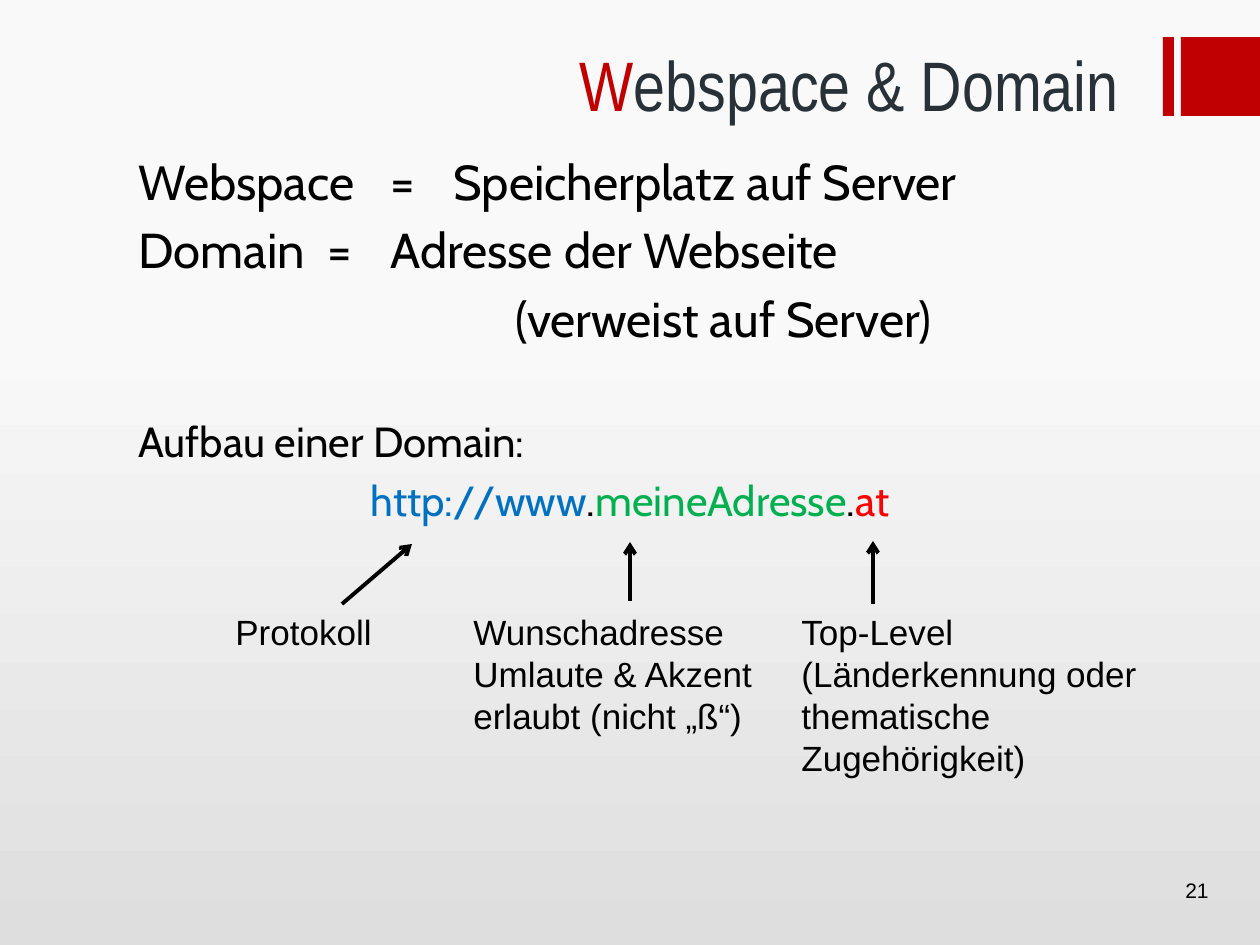
from dataclasses import dataclass

from lxml.etree import SubElement
from pptx import Presentation
from pptx.dml.color import RGBColor
from pptx.enum.shapes import MSO_CONNECTOR, MSO_SHAPE
from pptx.enum.text import MSO_ANCHOR, MSO_AUTO_SIZE as AUTO, PP_ALIGN as ALIGN
from pptx.oxml import parse_xml
from pptx.oxml.ns import nsdecls, qn
from pptx.util import Pt

EMU_PER_PX = 914400 / 126


@dataclass(frozen=True)
class Theme:
    accent: str = "C00000"
    heading: str = "283138"
    text: str = "000000"
    protocol: str = "0070C0"
    address: str = "00B050"
    top_level: str = "FF0000"
    background: tuple = ((0, "DEDEDE"), (65, "F9F9F9"), (100, "F7F7F7"))
    title_font: str = "Arial Narrow"
    body_font: str = "Cabin"
    note_font: str = "Arial"
    title_size: int = 40
    lead_size: int = 28
    body_size: int = 24
    note_size: int = 20
    number_size: int = 12


THEME = Theme()
TABS = (275, 377)  # equals sign, explanation


def px(n):
    return round(n * EMU_PER_PX)


def place(sp, left, top, width, height):
    sp.left, sp.top, sp.width, sp.height = map(px, (left, top, width, height))


def add_text(p, text, font=THEME.body_font, size=THEME.body_size, color=THEME.text):
    r = p.add_run()
    r.text = text
    r.font.name, r.font.size = font, Pt(size)
    r.font.color.rgb = RGBColor.from_string(color)


def next_paragraph(tf):
    """Return the first paragraph while it is empty, then new ones."""
    p = tf.paragraphs[0]
    return tf.add_paragraph() if p.runs else p


def add_body_paragraph(tf, before, indent=0, align=ALIGN.LEFT):
    p = next_paragraph(tf)
    p.alignment, p.space_before = align, Pt(before)
    pPr = p._p.get_or_add_pPr()
    pPr.set("marL", str(px(indent)))
    pPr.set("indent", "0")
    SubElement(pPr, qn("a:buNone"))
    tabs = SubElement(pPr, qn("a:tabLst"))
    for pos in TABS:
        SubElement(tabs, qn("a:tab"), pos=str(px(pos)), algn="l")
    return p


def set_background(slide):
    stops = "".join(
        f'<a:gs pos="{pos * 1000}"><a:srgbClr val="{color}"/></a:gs>'
        for pos, color in THEME.background)
    bg = parse_xml(
        f'<p:bg {nsdecls("p", "a")}><p:bgPr><a:gradFill rotWithShape="1">'
        f'<a:gsLst>{stops}</a:gsLst><a:lin ang="16200000" scaled="0"/>'
        '</a:gradFill><a:effectLst/></p:bgPr></p:bg>')
    slide._element.cSld.insert(0, bg)


def add_bar(slide, left, width):
    sp = slide.shapes.add_shape(MSO_SHAPE.RECTANGLE, *map(px, (left, 37, width, 79)))
    sp.shadow.inherit = False
    sp.fill.solid()
    sp.fill.fore_color.rgb = RGBColor.from_string(THEME.accent)
    sp.line.fill.background()


def add_box(slide, left, top, width, height, lines, size, align=ALIGN.LEFT):
    sp = slide.shapes.add_textbox(*map(px, (left, top, width, height)))
    tf = sp.text_frame
    tf.word_wrap = True
    for line in lines:
        p = next_paragraph(tf)
        p.alignment = align
        add_text(p, line, font=THEME.note_font, size=size)
    return sp


def add_note(slide, left, width, height, *lines):
    sp = add_box(slide, left, 604, width, height, lines, THEME.note_size)
    sp.text_frame.auto_size = AUTO.SHAPE_TO_FIT_TEXT
    return sp


def add_arrow(slide, start, end, source=None):
    cx = slide.shapes.add_connector(MSO_CONNECTOR.STRAIGHT, *map(px, start + end))
    if source is not None:
        cx.begin_connect(source, 0)
    cx.line.color.rgb = RGBColor.from_string(THEME.text)
    cx.line.width = Pt(2.25)
    SubElement(cx.line._get_or_add_ln(), qn("a:tailEnd"), type="arrow")
    SubElement(cx._element.spPr, qn("a:effectLst"))


def fill_title(sp):
    place(sp, 123, 35, 1008, 159)
    tf = sp.text_frame
    tf.auto_size, tf.vertical_anchor = AUTO.NONE, MSO_ANCHOR.TOP
    p = tf.paragraphs[0]
    p.alignment = ALIGN.RIGHT
    for text, color in (("W", THEME.accent), ("ebspace & Domain", THEME.heading)):
        add_text(p, text, font=THEME.title_font, size=THEME.title_size, color=color)


def fill_body(sp):
    place(sp, 126, 145, 1008, 724)
    tf = sp.text_frame
    tf.auto_size = AUTO.NONE

    # Definitions, aligned on the tab stops
    for text, before, indent in (
            ("Webspace\t=\tSpeicherplatz auf Server", 0, 0),
            ("Domain\t=\tAdresse der Webseite", 5.6, 0),
            ("(verweist auf Server)", 5.6, TABS[1])):
        add_text(add_body_paragraph(tf, before, indent), text, size=THEME.lead_size)

    # Parts of a domain
    add_text(add_body_paragraph(tf, 39), "Aufbau einer Domain:")
    p = add_body_paragraph(tf, 4.8, align=ALIGN.CENTER)
    for text, color in (("http://www", THEME.protocol), (".", THEME.text),
                        ("meineAdresse", THEME.address), (".", THEME.text),
                        ("at", THEME.top_level)):
        add_text(p, text, color=color)


def main():
    prs = Presentation()
    prs.slide_width, prs.slide_height = px(1260), px(945)
    slide = prs.slides.add_slide(prs.slide_layouts[1])

    # Background and corner bars
    set_background(slide)
    add_bar(slide, 1163, 11)
    add_bar(slide, 1181, 79)

    # Title and body
    fill_title(slide.shapes.title)
    fill_body(slide.placeholders[1])

    # Notes below the domain
    add_note(slide, 789, 387, 183, "Top-Level",
             "(Länderkennung oder thematische Zugehörigkeit)")
    add_note(slide, 461, 318, 140, "Wunschadresse",
             "Umlaute & Akzent erlaubt (nicht „ß“)")
    protocol = add_note(slide, 223, 238, 55, "Protokoll")

    # Arrows from the notes to the domain parts
    add_arrow(slide, (342, 604), (412, 544), source=protocol)
    add_arrow(slide, (630, 601), (630, 542))
    add_arrow(slide, (873, 604), (873, 541))

    # Slide number
    number = add_box(slide, 1091, 869, 130, 42, ["21"], THEME.number_size, ALIGN.RIGHT)
    number.text_frame.vertical_anchor = MSO_ANCHOR.MIDDLE

    prs.save("out.pptx")


if __name__ == "__main__":
    main()
